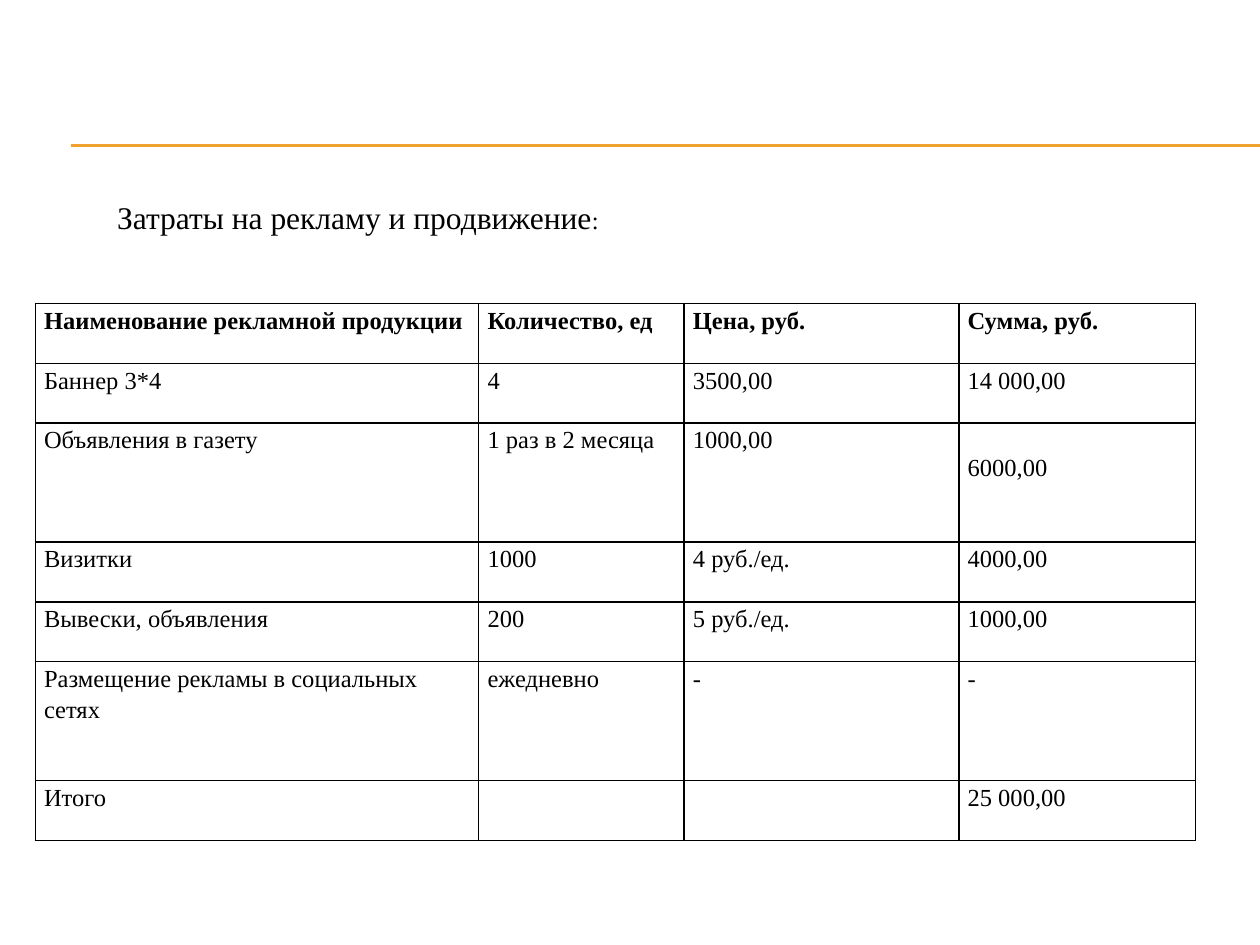
from dataclasses import dataclass
from lxml.etree import SubElement
from pptx import Presentation
from pptx.dml.color import RGBColor
from pptx.enum.text import MSO_ANCHOR, MSO_AUTO_SIZE, PP_ALIGN
from pptx.oxml.ns import qn
from pptx.util import Inches, Pt


@dataclass(frozen=True)
class Theme:
    """Hold the colours, font and type sizes."""
    ink: str = "000000"
    rule: str = "F0A22E"
    face: str = "Times New Roman"
    head: int = 18
    text: int = 14


THEME = Theme()
WIDE, HIGH = Inches(10), Inches(7.5)
COLS = (0.352, 0.163, 0.218, 0.188)
ROWS = (1, 1, 2, 1, 1, 2, 1)
UNIT = Inches(4.26) / sum(ROWS)
DATA = (
    ("Наименование рекламной продукции", "Количество, ед", "Цена, руб.", "Сумма, руб."),
    ("Баннер 3*4", "4", "3500,00", "14 000,00"),
    ("Объявления в газету", "1 раз в 2 месяца", "1000,00", "6000,00"),
    ("Визитки", "1000", "4 руб./ед.", "4000,00"),
    ("Вывески, объявления", "200", "5 руб./ед.", "1000,00"),
    ("Размещение рекламы в социальных сетях", "ежедневно", "-", "-"),
    ("Итого", "", "", "25 000,00"),
)
LOW = (2, 3)


def apply(item, form):
    """Set each attribute named in a dict."""
    for name, value in form.items():
        setattr(item, name, value)


def style(font, size, bold=False):
    """Give a font the theme's face and ink."""
    apply(font, {"name": THEME.face, "size": Pt(size), "bold": bold})
    font.color.rgb = RGBColor.from_string(THEME.ink)


def add_rule(slide, top):
    """Draw a thin rule to the right edge."""
    line = slide.shapes.add_connector(1, int(WIDE * 0.056), top, WIDE, top)
    line.line.color.rgb = RGBColor.from_string(THEME.rule)
    line.line.width = Pt(0.75)
    SubElement(line._element.spPr, qn("a:effectLst"))


def add_title(slide):
    """Fill and place the title."""
    title = slide.shapes.title
    apply(title, {"left": Inches(0.83), "top": Inches(1.52),
                  "width": Inches(5.67), "height": Inches(0.71)})
    frame = title.text_frame
    apply(frame, {"word_wrap": True, "auto_size": MSO_AUTO_SIZE.NONE,
                  "vertical_anchor": MSO_ANCHOR.TOP})
    para = frame.paragraphs[0]
    para.alignment = PP_ALIGN.LEFT
    for text, size in (("Затраты на рекламу и продвижение", THEME.head), (":", THEME.text)):
        run = para.add_run()
        run.text = text
        style(run.font, size)


def add_edges(cell):
    """Draw the four borders of a cell."""
    props = cell._tc.get_or_add_tcPr()
    for side in "LRTB":
        edge = SubElement(props, qn(f"a:ln{side}"), w=str(Pt(1)))
        fill = SubElement(edge, qn("a:solidFill"))
        SubElement(fill, qn("a:srgbClr"), val=THEME.ink)


def fill_cell(cell, text, head, top):
    """Write and format one cell."""
    apply(cell, {"margin_left": Inches(0.07), "margin_right": Inches(0.07),
                 "margin_top": top, "margin_bottom": 0, "text": text})
    para = cell.text_frame.paragraphs[0]
    apply(para, {"line_spacing": 1.15,
                 "alignment": PP_ALIGN.JUSTIFY if head else PP_ALIGN.LEFT})
    style(para.font, THEME.text, head)
    for run in para.runs:
        style(run.font, THEME.text, head)
    add_edges(cell)
    cell.fill.background()


def add_costs(slide):
    """Build the table of costs."""
    frame = slide.shapes.add_table(
        len(ROWS), len(COLS), Inches(0.28), Inches(2.41),
        int(WIDE * sum(COLS)), int(UNIT * sum(ROWS)))
    table = frame.table
    apply(table, {"first_row": False, "horz_banding": False})
    for col, share in zip(table.columns, COLS):
        col.width = int(WIDE * share)
    for row, count in zip(table.rows, ROWS):
        row.height = int(UNIT * count)
    for r, line in enumerate(DATA):
        for c, text in enumerate(line):
            top = Inches(0.22) if (r, c) == LOW else 0
            fill_cell(table.cell(r, c), text, r == 0, top)


def main():
    """Build and save the slide."""
    deck = Presentation()
    apply(deck, {"slide_width": WIDE, "slide_height": HIGH})
    slide = deck.slides.add_slide(deck.slide_layouts[5])
    for top in (1.15, 1.16):
        add_rule(slide, Inches(top))
    add_costs(slide)
    add_title(slide)
    deck.save("out.pptx")


if __name__ == "__main__":
    main()
